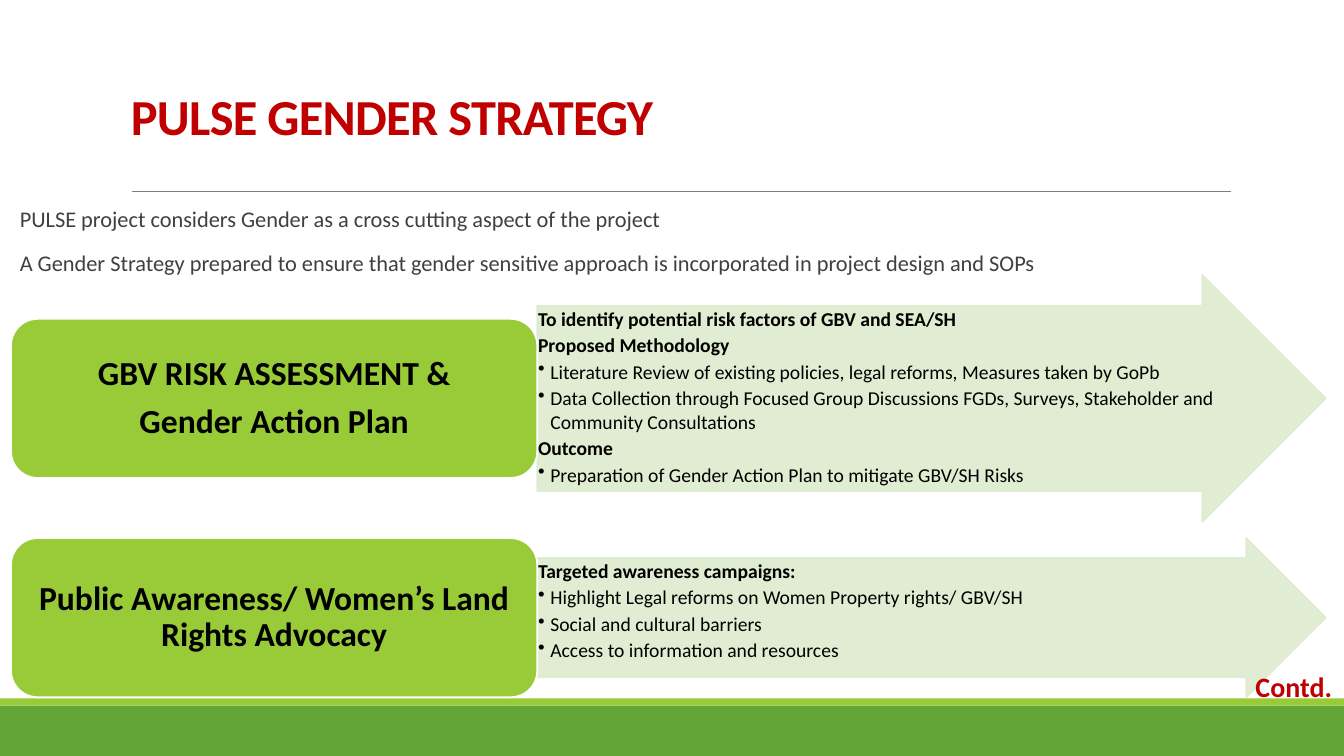
from lxml import etree
from pptx import Presentation
from pptx.dml.color import RGBColor
from pptx.enum.shapes import MSO_CONNECTOR, MSO_SHAPE
from pptx.enum.text import MSO_ANCHOR, PP_ALIGN
from pptx.oxml.ns import qn
from pptx.util import Cm, Pt

RECTANGLE = MSO_SHAPE.RECTANGLE
ROUNDED = MSO_SHAPE.ROUNDED_RECTANGLE
ARROW = MSO_SHAPE.RIGHT_ARROW
STRAIGHT = MSO_CONNECTOR.STRAIGHT
TOP, MIDDLE, BOTTOM = MSO_ANCHOR.TOP, MSO_ANCHOR.MIDDLE, MSO_ANCHOR.BOTTOM
LEFT, CENTER, JUSTIFY = PP_ALIGN.LEFT, PP_ALIGN.CENTER, PP_ALIGN.JUSTIFY

COLORS = {
    "green": "63A537",
    "lime": "99CB38",
    "pale": "DEECCE",
    "red": "C00000",
    "gray": "808080",
    "text": "404040",
    "black": "000000",
    "white": "FFFFFF",
}
WIDTH, HEIGHT = 33.87, 19.05
LABEL_WIDTH, LABEL_HEIGHT = 13.26, 4.01
ARROW_LEFT, ARROW_WIDTH = 13.54, 19.87

STEPS = [
    (6.93, 6.22, ["GBV RISK ASSESSMENT &", "Gender Action Plan"], [
        ("To identify potential risk factors of GBV and SEA/SH", False),
        ("Proposed Methodology", False),
        ("Literature Review of existing policies, legal reforms, Measures taken by GoPb", True),
        ("Data Collection through Focused Group Discussions FGDs, Surveys, "
         "Stakeholder and Community Consultations", True),
        ("Outcome", False),
        ("Preparation of Gender Action Plan to mitigate GBV/SH Risks", True),
    ]),
    (13.56, 4.01, ["Public Awareness/ Women’s Land Rights Advocacy"], [
        ("Targeted awareness campaigns:", False),
        ("Highlight Legal reforms on Women Property rights/ GBV/SH", True),
        ("Social and cultural barriers", True),
        ("Access to information and resources", True),
    ]),
]


class StrategySlide:
    font = "Calibri"

    def __init__(self, page):
        self.page = page

    def color(self, name):
        return RGBColor.from_string(COLORS[name])

    def shape(self, kind, place, fill, line=None, alpha=None):
        shape = self.page.shapes.add_shape(kind, *map(Cm, place))
        shape.shadow.inherit = False
        shape.fill.solid()
        shape.fill.fore_color.rgb = self.color(fill)
        if line:
            shape.line.color.rgb = self.color(line)
            shape.line.width = Pt(1.25)
        else:
            shape.line.fill.background()
        if alpha:
            for tint in shape._element.spPr.iter(qn("a:srgbClr")):
                etree.SubElement(tint, qn("a:alpha"), val=str(alpha * 1000))
        return shape

    def rule(self, left, right, top):
        line = self.page.shapes.add_connector(STRAIGHT, Cm(left), Cm(top), Cm(right), Cm(top))
        line.line.color.rgb = self.color("gray")
        line.line.width = Pt(0.5)
        etree.SubElement(line._element.spPr, qn("a:effectLst"))

    def fill_text(self, box, lines, size, color, bold=False, align=LEFT, anchor=TOP,
                  spacing=1.0, before=0, after=0, margins=(0.25, 0.13), wrap=True):
        frame = box.text_frame
        frame.text = "\n".join(lines)
        frame.word_wrap = wrap
        frame.vertical_anchor = anchor
        frame.margin_left = frame.margin_right = Cm(margins[0])
        frame.margin_top = frame.margin_bottom = Cm(margins[1])
        for para in frame.paragraphs:
            para.alignment = align
            para.line_spacing = spacing
            para.space_before = Pt(before)
            para.space_after = Pt(after)
            for span in para.runs:
                span.font.name = self.font
                span.font.size = Pt(size)
                span.font.bold = bold
                span.font.color.rgb = self.color(color)
        return frame.paragraphs

    def text(self, place, lines, size, color, **style):
        box = self.page.shapes.add_textbox(*map(Cm, place))
        return self.fill_text(box, lines, size, color, **style)

    def indent(self, para, margin, first):
        settings = para._p.get_or_add_pPr()
        settings.set("marL", str(Cm(margin)))
        settings.set("indent", str(Cm(first)))
        return settings

    def arrow(self, place, items):
        arrow = self.shape(ARROW, place, "pale", "pale", alpha=90)
        arrow.adjustments[0] = 0.75
        arrow.adjustments[1] = 0.5
        paras = self.fill_text(arrow, [words for words, _ in items], 14, "black",
                               after=2.1, margins=(0.02, 0.02))
        for para, (_, bulleted) in zip(paras, items):
            settings = self.indent(para, 0.31, -0.31)
            if bulleted:
                etree.SubElement(settings, qn("a:buChar"), char="•")
            else:
                etree.SubElement(settings, qn("a:buNone"))
                para.runs[0].font.bold = True

    def label(self, place, lines):
        label = self.shape(ROUNDED, place, "lime", "white")
        self.fill_text(label, lines, 24, "black", bold=True, align=CENTER,
                       anchor=MIDDLE, spacing=0.9, after=8.4)


def main():
    deck = Presentation()
    deck.slide_width, deck.slide_height = Cm(WIDTH), Cm(HEIGHT)
    slide = StrategySlide(deck.slides.add_slide(deck.slide_layouts[6]))

    slide.shape(RECTANGLE, (0, 17.78, WIDTH, 1.27), "green")
    slide.shape(RECTANGLE, (0, 17.6, WIDTH, 0.18), "lime")
    slide.rule(3.33, 31.01, 4.83)

    title = slide.text((3.05, 1.47, 27.94, 2.34), ["PULSE GENDER STRATEGY"], 36, "red",
                       bold=True, anchor=BOTTOM, spacing=0.85)
    title[0].runs[0].font._element.set("spc", "-50")

    intro = slide.text((0.25, 4.95, 33.6, 11.35), [
        "PULSE project considers Gender as a cross cutting aspect of the project",
        "A Gender Strategy prepared to ensure that gender sensitive approach "
        "is incorporated in project design and SOPs",
    ], 16, "text", align=JUSTIFY, spacing=1.15, before=3, after=6, margins=(0, 0.13))
    for para in intro:
        slide.indent(para, 0.25, 0)

    for top, height, label, items in STEPS:
        slide.arrow((ARROW_LEFT, top, ARROW_WIDTH, height), items)
        label_top = top + (height - LABEL_HEIGHT) / 2
        slide.label((ARROW_LEFT - LABEL_WIDTH, label_top, LABEL_WIDTH, LABEL_HEIGHT), label)

    slide.text((31.39, 16.31, 2.46, 1.4), ["Contd."], 20, "red",
               bold=True, spacing=1.5, wrap=False)
    deck.save("out.pptx")


if __name__ == "__main__":
    main()
